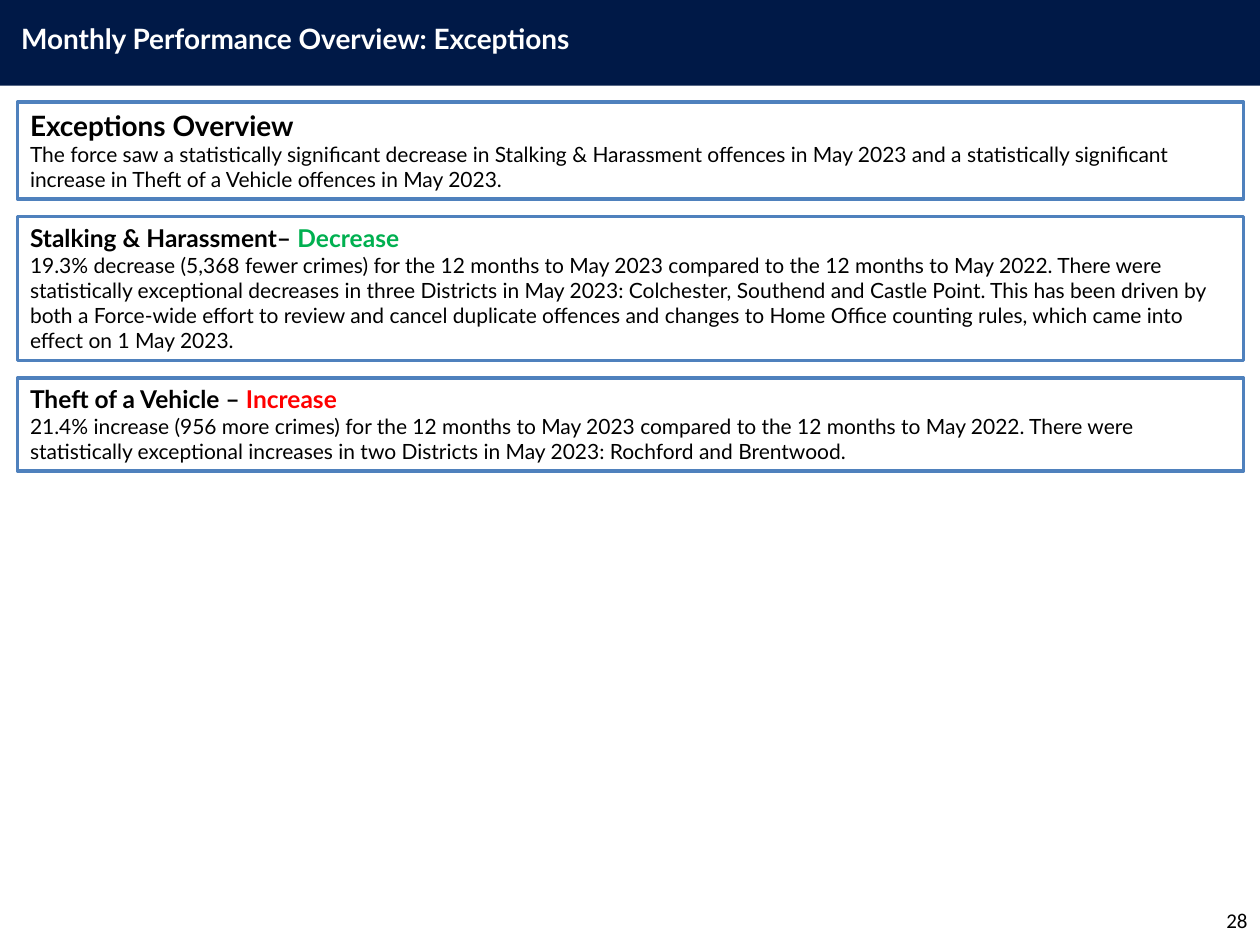
from pptx import Presentation
from pptx.dml.color import RGBColor
from pptx.enum.shapes import MSO_SHAPE
from pptx.enum.text import MSO_ANCHOR, MSO_AUTO_SIZE, PP_ALIGN
from pptx.util import Inches, Pt

NAVY = RGBColor(0x00, 0x19, 0x47)
BLUE = RGBColor(0x4F, 0x81, 0xBD)
GREEN = RGBColor(0x00, 0xB0, 0x50)
RED = RGBColor(0xFF, 0x00, 0x00)
BLACK = RGBColor(0x00, 0x00, 0x00)
WHITE = RGBColor(0xFF, 0xFF, 0xFF)

LEFT, TOP, WIDTH, GAP = 0.14, 0.81, 9.73, 0.14

# Each panel: height, heading size, heading runs, body
PANELS = [
    (0.77, 16, [("Exceptions Overview", BLACK)],
     "The force saw a statistically significant decrease in Stalking & "
     "Harassment offences in May 2023 and a statistically significant "
     "increase in Theft of a Vehicle offences in May 2023."),
    (1.14, 14, [("Stalking & Harassment– ", BLACK), ("Decrease", GREEN)],
     "19.3% decrease (5,368 fewer crimes) for the 12 months to May 2023 "
     "compared to the 12 months to May 2022. There were statistically "
     "exceptional decreases in three Districts in May 2023: Colchester, "
     "Southend and Castle Point. This has been driven by both a Force-wide "
     "effort to review and cancel duplicate offences and changes to Home "
     "Office counting rules, which came into effect on 1 May 2023."),
    (0.74, 14, [("Theft of a Vehicle – ", BLACK), ("Increase", RED)],
     "21.4% increase (956 more crimes) for the 12 months to May 2023 "
     "compared to the 12 months to May 2022. There were statistically "
     "exceptional increases in two Districts in May 2023: Rochford and "
     "Brentwood."),
]


class Page:
    def __init__(self, slide, font="Lato"):
        self.slide = slide
        self.font = font

    def run(self, para, text, size, color=BLACK, bold=False, font=None):
        run = para.add_run()
        run.text = text
        run.font.name = font or self.font
        run.font.size = Pt(size)
        run.font.bold = bold
        run.font.color.rgb = color

    def rect(self, left, top, width, height, fill, line=None):
        shape = self.slide.shapes.add_shape(
            MSO_SHAPE.RECTANGLE, Inches(left), Inches(top),
            Inches(width), Inches(height))
        shape.shadow.inherit = False
        shape.fill.solid()
        shape.fill.fore_color.rgb = fill
        if line is None:
            shape.line.fill.background()
        else:
            shape.line.color.rgb = line
            shape.line.width = Pt(2)
        return shape

    def label(self, left, top, width, height, text, size,
              align=PP_ALIGN.LEFT, anchor=MSO_ANCHOR.TOP, **style):
        box = self.slide.shapes.add_textbox(
            Inches(left), Inches(top), Inches(width), Inches(height))
        frame = box.text_frame
        frame.word_wrap = True
        frame.vertical_anchor = anchor
        para = frame.paragraphs[0]
        para.alignment = align
        self.run(para, text, size, **style)

    def panel(self, top, height, size, heading, body):
        """Outlined box with a bold heading above body text."""
        shape = self.rect(LEFT, top, WIDTH, height, WHITE, BLUE)
        frame = shape.text_frame
        frame.word_wrap = True
        frame.auto_size = MSO_AUTO_SIZE.SHAPE_TO_FIT_TEXT
        frame.vertical_anchor = MSO_ANCHOR.TOP
        head, para = frame.paragraphs[0], frame.add_paragraph()
        head.alignment = para.alignment = PP_ALIGN.LEFT
        for text, color in heading:
            self.run(head, text, size, color, bold=True)
        self.run(para, body, 12)


def main():
    deck = Presentation()
    deck.slide_width, deck.slide_height = Inches(10), Inches(7.5)
    page = Page(deck.slides.add_slide(deck.slide_layouts[6]))

    page.rect(0, -0.07, 10, 0.75, NAVY)
    page.label(0.07, 0.12, 5.67, 0.37,
               "Monthly Performance Overview: Exceptions", 16,
               color=WHITE, bold=True)
    page.label(7.67, 7.1, 2.33, 0.4, "28", 12, PP_ALIGN.RIGHT,
               MSO_ANCHOR.MIDDLE, font="Calibri")

    top = TOP
    for height, size, heading, body in PANELS:
        page.panel(top, height, size, heading, body)
        top += height + GAP

    deck.save("out.pptx")


if __name__ == "__main__":
    main()
